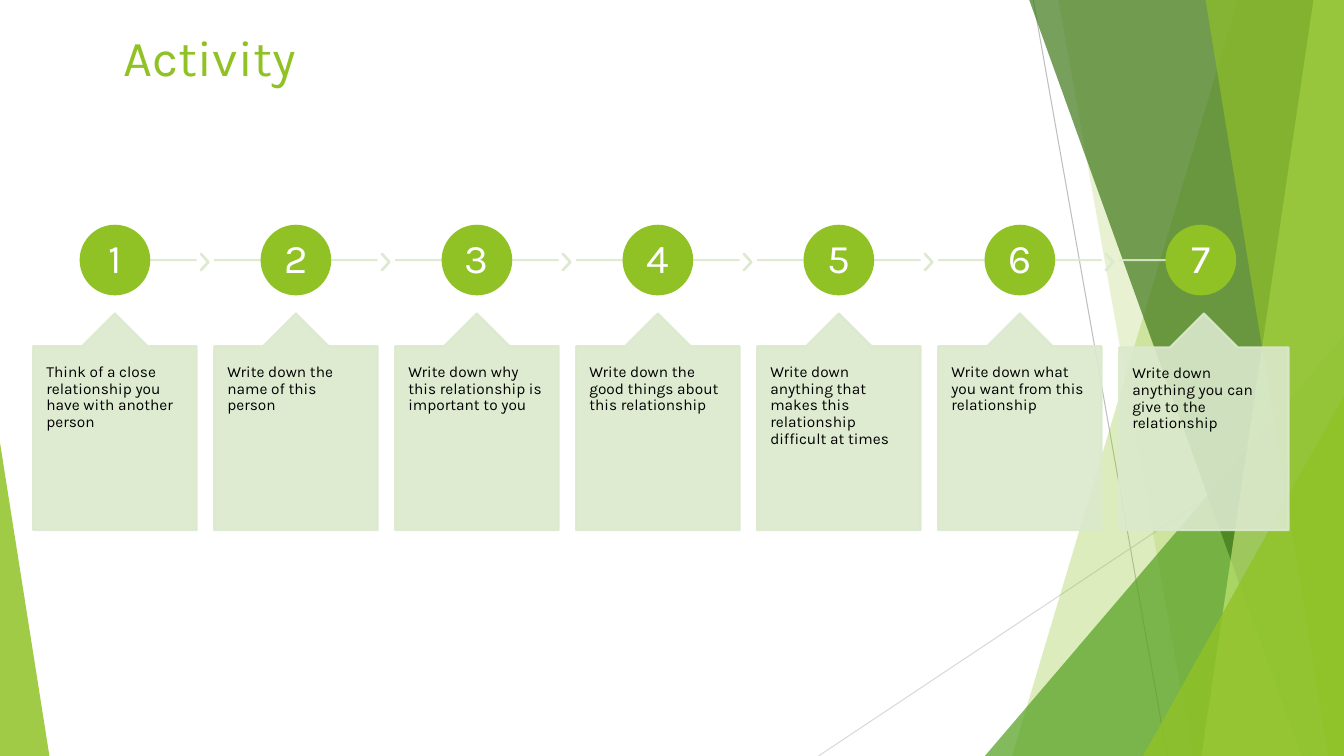
import pptx
import pptx.util
import pptx.dml.color
import pptx.enum.shapes
import pptx.enum.text
import pptx.oxml.ns
import lxml.etree

# Content
TITLE = "Activity"
STEPS = [
    "Think of a close relationship you have with another person",
    "Write down the name of this person",
    "Write down why this relationship is important to you",
    "Write down the good things about this relationship",
    "Write down anything that makes this relationship difficult at times",
    "Write down what you want from this relationship",
    "Write down anything you can give to the relationship",
]
FONT = "Karla"
GREEN, PALE, WHITE, BLACK = "90C226", "DBE9CD", "FFFFFF", "000000"

# Backdrop, in percent of the slide's width and height
RAYS = [  # x1, y1, x2, y2, colour
    (76.88, 0, 86.85, 100, "BFBFBF"),
    (100, 53.73, 60.9, 100, "D9D9D9"),
]
FACETS = [  # panel: x at top, x at bottom; peak: left, top, width, apex
    ("panel", (92.1, 75.3), GREEN, 30),
    ("panel", (78.75, 88.73), GREEN, 20),
    ("peak", (73.28, 44.4, 26.72, 1), "54A021", 72),
    ("panel", (76.58, 96.83), "3F7819", 70),
    ("panel", (97.73, 89.4), "C0E474", 70),
    ("panel", (89.7, 98.85), GREEN, 65),
    ("peak", (85.05, 52.4, 14.95, 1), GREEN, 80),
    ("peak", (0, 58.53, 3.68, 0), GREEN, 85),
]

# Grid of steps, in inches
FIRST_LEFT, PITCH = 0.33, 1.8 - 0.005
CARD_TOP, CARD_WIDTH, LAST_CARD_WIDTH, CARD_HEIGHT = 3.11, 1.62, 1.68, 2.15
TRACK_Y, DISC = 2.58, 0.68
CHEVRON_WIDTH, CHEVRON_HEIGHT, CHEVRON_GAP = 0.08, 0.16, 0.04

SHAPE = pptx.enum.shapes.MSO_SHAPE
ANCHOR = pptx.enum.text.MSO_ANCHOR
ALIGN = pptx.enum.text.PP_ALIGN
inch = pptx.util.Inches

deck = pptx.Presentation()
deck.slide_width, deck.slide_height = inch(13.33), inch(7.5)
slide = deck.slides.add_slide(deck.slide_layouts[6])
shapes = slide.shapes


def rgb(value):
    return pptx.dml.color.RGBColor.from_string(value)


def across(percent):
    return round(deck.slide_width * percent / 100)


def down(percent):
    return round(deck.slide_height * percent / 100)


def paint(fill, holder, colour, opacity):
    """Solid colour for a fill; holder is the XML element around it."""
    fill.solid()
    fill.fore_color.rgb = rgb(colour)
    if opacity < 100:
        solid = holder.find(pptx.oxml.ns.qn("a:solidFill"))
        alpha = lxml.etree.SubElement(solid[0], pptx.oxml.ns.qn("a:alpha"))
        alpha.set("val", str(opacity * 1000))


def outline(shape, colour, width, opacity=100):
    shape.line.width = pptx.util.Pt(width)
    paint(shape.line.fill, shape.line._get_or_add_ln(), colour, opacity)


def dress(shape, colour, opacity=100, line_width=None):
    shape.shadow.inherit = False
    paint(shape.fill, shape._element.spPr, colour, opacity)
    if line_width:
        outline(shape, colour, line_width, opacity)
    else:
        shape.line.fill.background()


def add_line(x1, y1, x2, y2, colour, width, opacity=100):
    line = shapes.add_connector(
        pptx.enum.shapes.MSO_CONNECTOR.STRAIGHT, x1, y1, x2, y2)
    outline(line, colour, width, opacity)
    lxml.etree.SubElement(line._element.spPr, pptx.oxml.ns.qn("a:effectLst"))


def add_step_part(kind, left, top, width, height, opacity=100, colour=PALE, adjust=()):
    part = shapes.add_shape(kind, inch(left), inch(top), inch(width), inch(height))
    for i, value in enumerate(adjust):
        part.adjustments[i] = value
    dress(part, colour, opacity, 1.5)
    return part


def write(shape, text, size, colour, align, anchor, inset_x, inset_y, spacing=None):
    frame = shape.text_frame
    frame.text = text
    frame.word_wrap = True
    frame.vertical_anchor = anchor
    frame.margin_left = frame.margin_right = inch(inset_x)
    frame.margin_top = frame.margin_bottom = inch(inset_y)
    paragraph = frame.paragraphs[0]
    paragraph.alignment = align
    if spacing:
        paragraph.line_spacing = spacing
    font = paragraph.runs[0].font
    font.name, font.size, font.color.rgb = FONT, pptx.util.Pt(size), rgb(colour)


# Backdrop
for x1, y1, x2, y2, colour in RAYS:
    add_line(across(x1), down(y1), across(x2), down(y2), colour, 0.75)

for kind, place, colour, opacity in FACETS:
    if kind == "panel":
        top_x, bottom_x = place
        builder = shapes.build_freeform(across(top_x), 0)
        builder.add_line_segments(
            [(across(100), 0), (across(100), down(100)), (across(bottom_x), down(100))])
        facet = builder.convert_to_shape()
    else:
        left, top, width, apex = place
        facet = shapes.add_shape(SHAPE.ISOSCELES_TRIANGLE, across(left), down(top),
                                 across(width), down(100 - top))
        facet.adjustments[0] = apex
    dress(facet, colour, opacity)

# Title
heading = shapes.add_textbox(inch(1.13), inch(0.21), inch(9.4), inch(0.89))
write(heading, TITLE, 36, GREEN, ALIGN.LEFT, ANCHOR.TOP, 0.1, 0.05)

# Steps: track, chevron, numbered disc, card
for index, step in enumerate(STEPS):
    first, last = index == 0, index == len(STEPS) - 1
    left = FIRST_LEFT + index * PITCH
    centre, right = left + CARD_WIDTH / 2, left + CARD_WIDTH

    add_line(inch(centre if first else left), inch(TRACK_Y),
             inch(centre if last else right), inch(TRACK_Y), PALE, 1.5, 90)
    if not last:
        add_step_part(SHAPE.CHEVRON, right + CHEVRON_GAP, TRACK_Y + 0.02 - CHEVRON_HEIGHT / 2,
                      CHEVRON_WIDTH, CHEVRON_HEIGHT, 90, adjust=[0.9])

    disc = add_step_part(SHAPE.OVAL, centre - DISC / 2, TRACK_Y - DISC / 2,
                         DISC, DISC, colour=GREEN)
    write(disc, str(index + 1), 29, WHITE, ALIGN.CENTER, ANCHOR.MIDDLE, 0.03, 0.03, 0.9)

    card = add_step_part(SHAPE.UP_ARROW_CALLOUT, left, CARD_TOP,
                         LAST_CARD_WIDTH if last else CARD_WIDTH, CARD_HEIGHT, 90,
                         adjust=[0.5, 0.2, 0.2, 1])
    write(card, step, 11, BLACK, ALIGN.LEFT, ANCHOR.TOP, 0.13, 0.18, 0.9)

deck.save("out.pptx")
